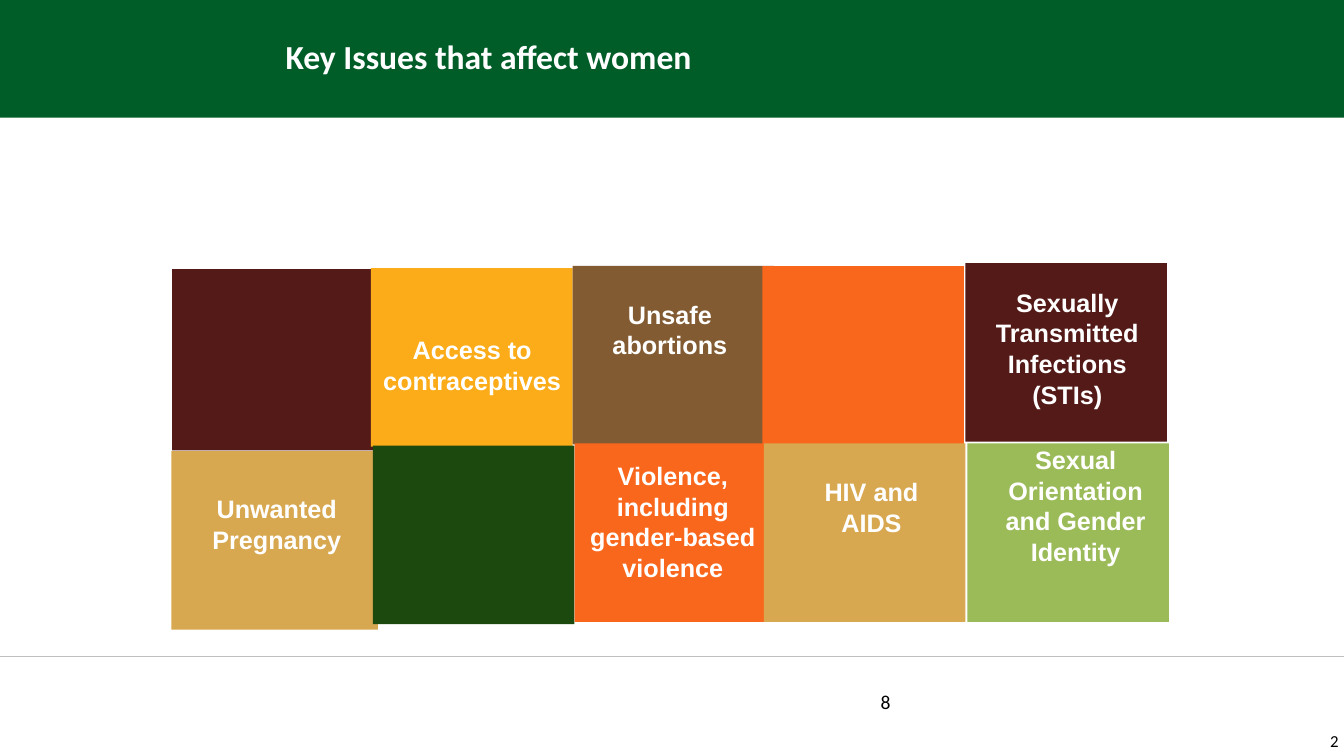
from lxml import etree
from pptx import Presentation
from pptx import util as u
from pptx.dml.color import RGBColor
from pptx.enum import shapes, text

Pt = u.Pt
WHITE = RGBColor(0xFF, 0xFF, 0xFF)
BLACK = RGBColor(0x00, 0x00, 0x00)
GREY = RGBColor(0xBF, 0xBF, 0xBF)
BANNER_GREEN = RGBColor(0x00, 0x5D, 0x28)
MAROON = RGBColor(0x53, 0x1A, 0x17)
AMBER = RGBColor(0xFB, 0xAC, 0x18)
BROWN = RGBColor(0x82, 0x5B, 0x32)
ORANGE = RGBColor(0xF9, 0x67, 0x1C)
SAND = RGBColor(0xD8, 0xA8, 0x51)
FOREST = RGBColor(0x1C, 0x4A, 0x0E)
LIME = RGBColor(0x9B, 0xBB, 0x59)

PAGE_WIDTH = 960
TILE_WIDTH = 144
TILE_HEIGHT = 127.5

deck = Presentation()
deck.slide_width, deck.slide_height = Pt(PAGE_WIDTH), Pt(540)
page = deck.slides.add_slide(deck.slide_layouts[6])


def add_block(left, top, width, height, colour):
    block = page.shapes.add_shape(
        shapes.MSO_SHAPE.RECTANGLE, Pt(left), Pt(top), Pt(width), Pt(height))
    block.shadow.inherit = False
    block.fill.solid()
    block.fill.fore_color.rgb = colour
    block.line.fill.background()


def add_words(words, left, top, width, height, font_name, size, colour,
              bold=False, inset=3.6, wrap=True):
    box = page.shapes.add_textbox(Pt(left), Pt(top), Pt(width), Pt(height))
    frame = box.text_frame
    frame.word_wrap = wrap
    frame.margin_left = frame.margin_right = Pt(inset)
    frame.margin_top = frame.margin_bottom = Pt(inset)
    para = frame.paragraphs[0]
    para.text = words
    para.font.name = font_name
    para.font.size = Pt(size)
    para.font.bold = bold
    para.font.color.rgb = colour
    return frame


# Banner and title
add_block(0, 0, PAGE_WIDTH, 84, BANNER_GREEN)
title = add_words("Key Issues that affect women", 200.4, 9.4, 725.6, 61.2,
                  "Calibri", 24, WHITE, bold=True)
title.vertical_anchor = text.MSO_ANCHOR.MIDDLE

# Footer rule
rule = page.shapes.add_connector(
    shapes.MSO_CONNECTOR.STRAIGHT, 0, Pt(468.7), Pt(PAGE_WIDTH), Pt(468.7))
rule.line.color.rgb = GREY
rule.line.width = Pt(0.75)
etree.SubElement(
    rule._element.spPr,
    "{http://schemas.openxmlformats.org/drawingml/2006/main}effectLst")

# Tiles: left, top, width, height, colour
tiles = [
    (123, 192.2, TILE_WIDTH, 129.6, MAROON),
    (265, 191.5, TILE_WIDTH, TILE_HEIGHT, AMBER),
    (409, 190, TILE_WIDTH, TILE_HEIGHT, BROWN),
    (544.5, 190.1, TILE_WIDTH, TILE_HEIGHT, ORANGE),
    (689.6, 188, TILE_WIDTH, TILE_HEIGHT, MAROON),
    (122.4, 322.2, 147.6, TILE_HEIGHT, SAND),
    (266.4, 318.4, TILE_WIDTH, TILE_HEIGHT, FOREST),
    (410.4, 316.8, TILE_WIDTH, TILE_HEIGHT, ORANGE),
    (545.7, 316.8, TILE_WIDTH, TILE_HEIGHT, SAND),
    (691, 316.8, TILE_WIDTH, TILE_HEIGHT, LIME),
]
for tile in tiles:
    add_block(*tile)

# Issue labels: words, left, top, width, height
labels = [
    ("Unwanted Pregnancy", 128.2, 349.2, 139, 49),
    ("Access to contraceptives", 267.8, 235.4, 139, 49),
    ("Unsafe abortions", 409, 210.2, 139, 49),
    ("Violence,\vincluding gender-based violence", 411.1, 325.4, 139, 93),
    ("HIV and\vAIDS", 553, 337, 139, 49),
    ("Sexually Transmitted Infections (STIs)", 694, 201.6, 136.8, 122.4),
    ("Sexual Orientation\vand Gender Identity", 700.6, 313.9, 135.4, 93),
]
for words, left, top, width, height in labels:
    label = add_words(words, left, top, width, height,
                      "Arial", 18, WHITE, bold=True, inset=2.9)
    label.paragraphs[0].alignment = text.PP_ALIGN.CENTER
    label.paragraphs[0].line_spacing = Pt(22)

# Page numbers
add_words("8", 625.4, 488.9, 26.6, 22.3, "Calibri", 14, BLACK)
corner = add_words("2", 945.4, 520.6, 14.4, 19.4, "Calibri", 12, BLACK, wrap=False)
corner.vertical_anchor = text.MSO_ANCHOR.BOTTOM
corner.paragraphs[0].alignment = text.PP_ALIGN.RIGHT

deck.save("out.pptx")
